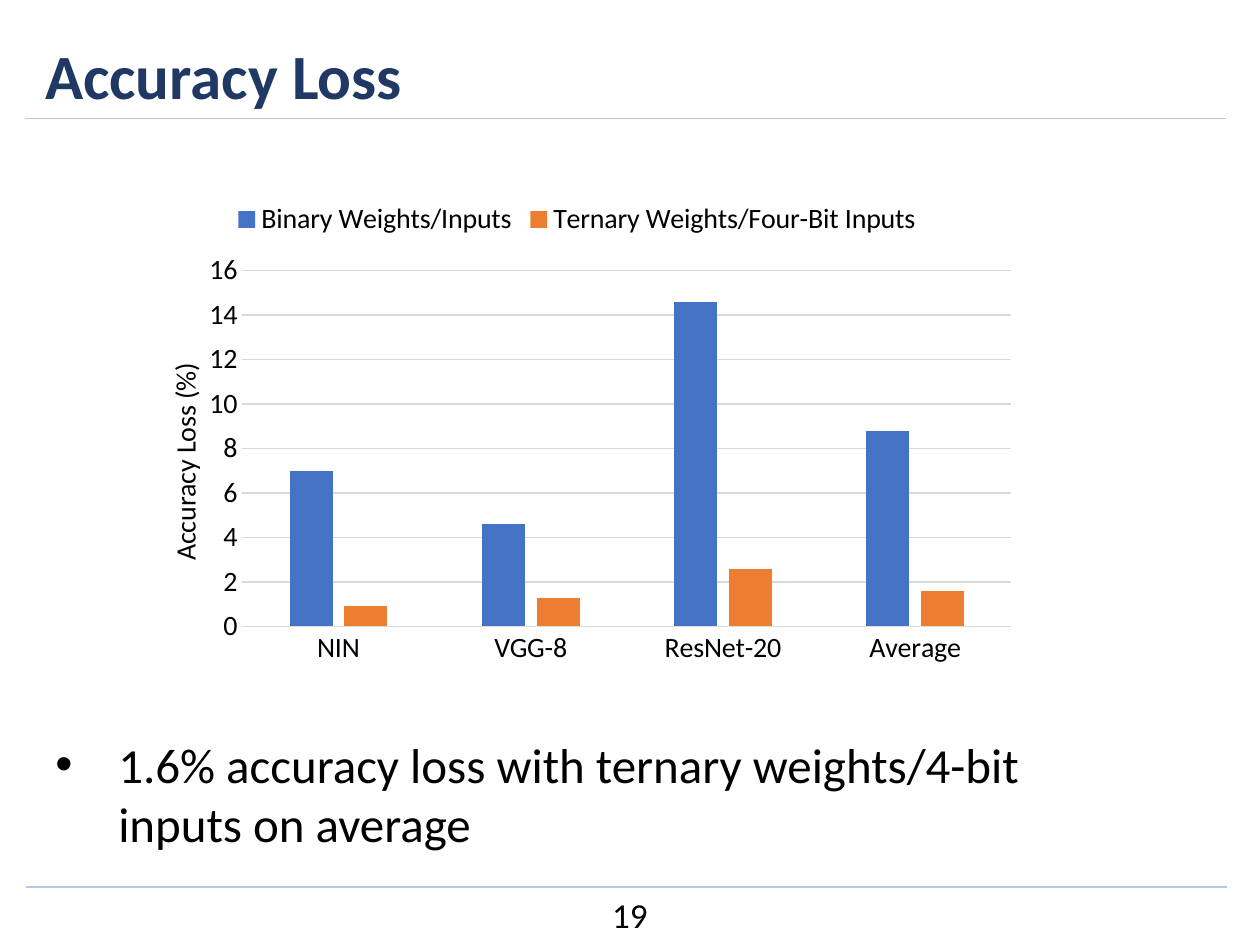
from lxml import etree
from pptx import Presentation
from pptx import util as u
from pptx.chart.data import CategoryChartData
from pptx.dml.color import RGBColor
from pptx.enum import chart as ch, shapes, text
from pptx.oxml import parse_xml
from pptx.oxml.ns import nsdecls, qn

FONT = "Calibri"
COLORS = {"title": "203864", "text": "000000", "rule": "B4C7E7", "grid": "D9D9D9"}

TITLE = "Accuracy Loss"
POINT = "1.6% accuracy loss with ternary weights/4-bit inputs on average"
PAGE = "19"
RULES = [(0.2, 0.94), (0.21, 7.04)]
RULE_WIDTH = 9.53

NETS = ["NIN", "VGG-8", "ResNet-20", "Average"]
LOSSES = [
    ("Binary Weights/Inputs", "4472C4", [7, 4.6, 14.6, 8.8]),
    ("Ternary Weights/Four-Bit Inputs", "ED7D31", [0.9, 1.3, 2.6, 1.6]),
]
AXIS_TITLE = "Accuracy Loss (%)"
CHART_BOX = (0.99, 1.49, 7.18, 3.87)
PLOT_AREA = {"x": 0.13, "y": 0.17, "w": 0.85, "h": 0.73}
TITLE_SPOT = {"x": 0.04, "y": 0.35}


def color(name):
    return RGBColor.from_string(COLORS[name])


def inches(box):
    return [u.Inches(n) for n in box]


def style(font, size, name="text", bold=False):
    font.name, font.size, font.bold = FONT, u.Pt(size), bold
    font.color.rgb = color(name)


def add_text(slide, box, words, size, name="text", bold=False,
             anchor=text.MSO_ANCHOR.TOP, align=text.PP_ALIGN.LEFT):
    frame = slide.shapes.add_textbox(*inches(box)).text_frame
    frame.word_wrap = True
    frame.vertical_anchor = anchor
    para = frame.paragraphs[0]
    para.alignment = align
    run = para.add_run()
    run.text = words
    style(run.font, size, name, bold)
    return para


def add_bullet(para, indent):
    props = para._p.get_or_add_pPr()
    props.set("marL", str(u.Inches(indent)))
    props.set("indent", str(-u.Inches(indent)))
    etree.SubElement(props, qn("a:buFont")).set("typeface", "Arial")
    etree.SubElement(props, qn("a:buChar")).set("char", "•")


def add_rule(slide, left, top):
    line = slide.shapes.add_connector(
        shapes.MSO_CONNECTOR.STRAIGHT, *inches((left, top, left + RULE_WIDTH, top)))
    line.line.color.rgb = color("rule")
    line.line.width = u.Pt(1)
    etree.SubElement(line._element.spPr, qn("a:effectLst"))


def layout(spot, inner=False):
    """Manual layout element, in fractions of the chart."""
    parts = '<c:layoutTarget val="inner"/>' if inner else ""
    parts += "".join(f'<c:{key}Mode val="edge"/>' for key in "xy")
    parts += "".join(f'<c:{key} val="{val}"/>' for key, val in spot.items())
    return parse_xml(f'<c:layout {nsdecls("c")}><c:manualLayout>{parts}'
                     "</c:manualLayout></c:layout>")


def place(parent, spot, before, inner=False):
    for old in parent.findall(qn("c:layout")):
        parent.remove(old)
    parent.find(qn(before)).addprevious(layout(spot, inner))


def add_losses(slide):
    data = CategoryChartData()
    data.categories = NETS
    for name, _, vals in LOSSES:
        data.add_series(name, vals)
    chart = slide.shapes.add_chart(
        ch.XL_CHART_TYPE.COLUMN_CLUSTERED, *inches(CHART_BOX), data).chart
    style(chart.font, 16)
    chart.has_title = False

    chart.has_legend = True
    chart.legend.position = ch.XL_LEGEND_POSITION.TOP
    chart.legend.include_in_layout = False
    style(chart.legend.font, 16)

    plot = chart.plots[0]
    plot.gap_width, plot.overlap = 219, -27
    plot.vary_by_categories = False
    for bars, (_, fill, _) in zip(plot.series, LOSSES):
        bars.format.fill.solid()
        bars.format.fill.fore_color.rgb = RGBColor.from_string(fill)

    cats, vals = chart.category_axis, chart.value_axis
    for axis in (cats, vals):
        axis.major_tick_mark = axis.minor_tick_mark = ch.XL_TICK_MARK.NONE
        style(axis.tick_labels.font, 16)
    vals.minimum_scale, vals.maximum_scale, vals.major_unit = 0, 16, 2
    vals.has_major_gridlines = True
    for line in (cats.format.line, vals.major_gridlines.format.line):
        line.color.rgb = color("grid")
        line.width = u.Pt(0.75)
    vals.format.line.fill.background()

    title = vals.axis_title
    run = title.text_frame.paragraphs[0].add_run()
    run.text = AXIS_TITLE
    style(run.font, 16)
    body = title._element.find(".//" + qn("a:bodyPr"))
    body.set("rot", "-5400000")
    body.set("vert", "horz")
    place(title._element, TITLE_SPOT, "c:overlay")
    place(chart._chartSpace.chart.plotArea, PLOT_AREA, "c:barChart", inner=True)


def main():
    deck = Presentation()
    deck.slide_width, deck.slide_height = u.Inches(10), u.Inches(7.5)
    slide = deck.slides.add_slide(deck.slide_layouts[6])
    for left, top in RULES:
        add_rule(slide, left, top)
    add_text(slide, (0.26, 0.26, 9.31, 0.66), TITLE, 36, "title", True,
             anchor=text.MSO_ANCHOR.MIDDLE)
    add_text(slide, (3.99, 7.04, 2.02, 0.5), PAGE, 20, align=text.PP_ALIGN.CENTER)
    point = add_text(slide, (0.34, 5.78, 8.91, 0.96), POINT, 28)
    add_bullet(point, 0.5)
    add_losses(slide)
    deck.save("out.pptx")


if __name__ == "__main__":
    main()
